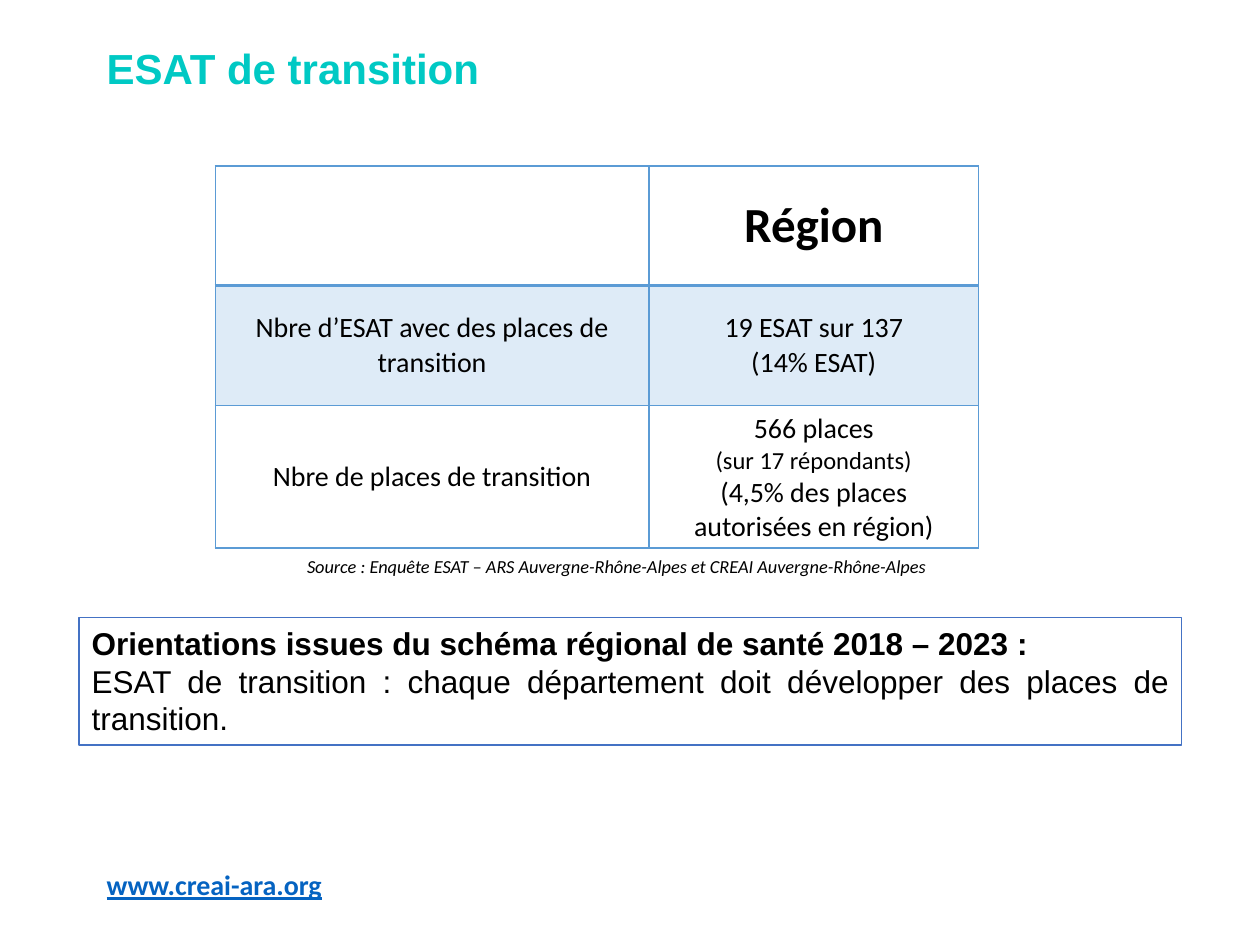
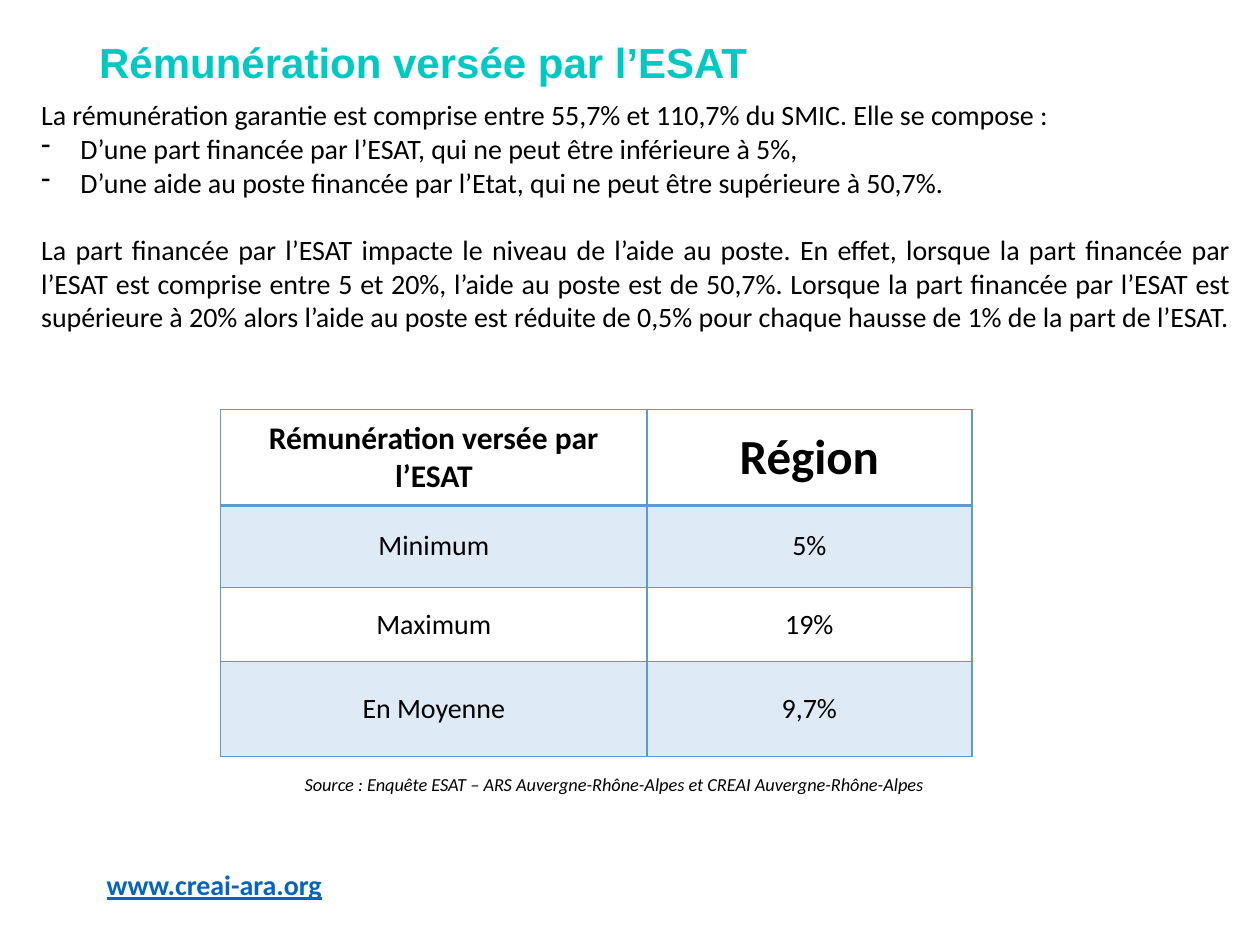
from dataclasses import dataclass, replace
from lxml.etree import SubElement
from pptx import Presentation
from pptx.dml.color import RGBColor
from pptx.enum.shapes import MSO_SHAPE
from pptx.enum.text import MSO_ANCHOR, PP_ALIGN
from pptx.oxml.ns import qn
from pptx.util import Cm, Pt


@dataclass(frozen=True)
class Theme:
    teal: str = "00C9C4"
    link: str = "0563C1"
    black: str = "000000"
    white: str = "FFFFFF"
    grid: str = "5B9BD5"
    band: str = "DEEBF7"
    frame: str = "4472C4"
    sans: str = "Calibri"
    head: str = "Arial"
    title: float = 24
    region: float = 28
    lead: float = 18
    body: float = 16
    small: float = 14
    source: float = 10.5


THEME = Theme()


@dataclass(frozen=True)
class Style:
    size: float = THEME.body
    font: str = THEME.sans
    color: str = THEME.black
    bold: bool = False
    italic: bool = False
    underline: bool = False
    align: PP_ALIGN = PP_ALIGN.LEFT
    before: float = 0
    spacing: float = 1.0
    bullet: bool = False


TITLE = Style(THEME.title, THEME.head, THEME.teal, bold=True, spacing=0.9)
SITE = Style(color=THEME.link, bold=True, underline=True)
SOURCE = Style(THEME.source, italic=True)
BODY = Style(align=PP_ALIGN.JUSTIFY)
ITEM = replace(BODY, bullet=True)
CELL = Style(align=PP_ALIGN.CENTER)
NOTE = replace(CELL, size=THEME.small)
LABEL = replace(CELL, size=THEME.lead, bold=True)
REGION = replace(LABEL, size=THEME.region)
ADVICE = Style(THEME.lead, THEME.head, bold=True)
DETAIL = replace(ADVICE, bold=False, align=PP_ALIGN.JUSTIFY)

SOURCE_TEXT = "Source : Enquête ESAT – ARS Auvergne-Rhône-Alpes et CREAI Auvergne-Rhône-Alpes"


def rgb(color):
    return RGBColor.from_string(color)


def add_dash(para):
    props = para._p.get_or_add_pPr()
    props.set("marL", str(Cm(0.79)))
    props.set("indent", str(-Cm(0.79)))
    SubElement(props, qn("a:buFontTx"))
    SubElement(props, qn("a:buChar"), char="-")


def write(frame, lines):
    frame.text = "\n".join(text for text, _ in lines)
    for para, (_, style) in zip(frame.paragraphs, lines):
        para.alignment = style.align
        para.line_spacing = style.spacing
        if style.before:
            para.space_before = Pt(style.before)
        if style.bullet:
            add_dash(para)
        for run in para.runs:
            font = run.font
            font.size = Pt(style.size)
            font.name = style.font
            font.bold = style.bold
            font.italic = style.italic
            font.underline = style.underline
            font.color.rgb = rgb(style.color)


def add_text(slide, place, lines, anchor=MSO_ANCHOR.TOP):
    box = slide.shapes.add_textbox(*map(Cm, place))
    box.text_frame.word_wrap = True
    box.text_frame.vertical_anchor = anchor
    write(box.text_frame, lines)


def add_panel(slide, place, lines):
    panel = slide.shapes.add_shape(MSO_SHAPE.RECTANGLE, *map(Cm, place))
    panel.shadow.inherit = False
    panel.fill.solid()
    panel.fill.fore_color.rgb = rgb(THEME.white)
    panel.line.color.rgb = rgb(THEME.frame)
    panel.line.width = Pt(1)
    panel.text_frame.word_wrap = True
    panel.text_frame.vertical_anchor = MSO_ANCHOR.TOP
    write(panel.text_frame, lines)


def add_edges(cell, row):
    props = cell._tc.get_or_add_tcPr()
    heavy = {"T": row == 1, "B": row == 0}
    for side in "LRTB":
        width = Pt(2 if heavy.get(side) else 1)
        line = SubElement(props, qn(f"a:ln{side}"), w=str(width))
        fill = SubElement(line, qn("a:solidFill"))
        SubElement(fill, qn("a:srgbClr"), val=THEME.grid)


def add_grid(slide, left, top, widths, heights, rows):
    size = map(Cm, (left, top, sum(widths), sum(heights)))
    table = slide.shapes.add_table(len(heights), len(widths), *size).table
    for column, width in zip(table.columns, widths):
        column.width = Cm(width)
    for index, (row, height) in enumerate(zip(rows, heights)):
        table.rows[index].height = Cm(height)
        for cell, lines in zip(table.rows[index].cells, row):
            write(cell.text_frame, lines)
            cell.vertical_anchor = MSO_ANCHOR.MIDDLE
            add_edges(cell, index)
            cell.fill.solid()
            cell.fill.fore_color.rgb = rgb(THEME.band if index % 2 else THEME.white)


def add_page(deck, title, place):
    slide = deck.slides.add_slide(deck.slide_layouts[6])
    add_text(slide, (1.9, 17.37, 7.62, 0.94), [("www.creai-ara.org", SITE)])
    add_text(slide, place, [(title, TITLE)], MSO_ANCHOR.MIDDLE)
    return slide


def add_places(deck):
    slide = add_page(deck, "ESAT de transition", (1.9, 0.58, 21.9, 1.7))
    rows = [
        [[], [("Région", REGION)]],
        [
            [("Nbre d’ESAT avec des places de transition", CELL)],
            [("19 ESAT sur 137", CELL), ("(14% ESAT)", CELL)],
        ],
        [
            [("Nbre de places de transition", CELL)],
            [
                ("566 places", CELL),
                ("(sur 17 répondants)", NOTE),
                ("(4,5% des places autorisées en région)", CELL),
            ],
        ],
    ]
    add_grid(slide, 4.34, 3.35, (8.74, 6.65), (2.41, 2.41, 2.69), rows)
    add_text(slide, (5.94, 11.07, 15.54, 0.71), [(SOURCE_TEXT, SOURCE)])
    add_panel(slide, (1.6, 12.45, 22.22, 2.57), [
        ("Orientations issues du schéma régional de santé 2018 – 2023 :", ADVICE),
        ("ESAT de transition : chaque département doit développer des places de transition.", DETAIL),
    ])


def add_pay(deck):
    slide = add_page(deck, "Rémunération versée par l’ESAT", (1.75, 0.41, 21.9, 1.8))
    values = [("Minimum", "5%"), ("Maximum", "19%"), ("En Moyenne", "9,7%")]
    rows = [[[("Rémunération versée par l’ESAT", LABEL)], [("Région", REGION)]]]
    rows += [[[(text, CELL)] for text in pair] for pair in values]
    add_grid(slide, 4.45, 8.26, (8.59, 6.55), (1.93, 1.65, 1.5, 1.91), rows)
    add_text(slide, (0.58, 1.85, 24.49, 5.74), [
        ("La rémunération garantie est comprise entre 55,7% et 110,7% du SMIC. Elle se compose :", BODY),
        ("D’une part financée par l’ESAT, qui ne peut être inférieure à 5%,", ITEM),
        ("D’une aide au poste financée par l’Etat, qui ne peut être supérieure à 50,7%.", ITEM),
        (
            "La part financée par l’ESAT impacte le niveau de l’aide au poste. "
            "En effet, lorsque la part financée par l’ESAT est comprise entre 5 et 20%, "
            "l’aide au poste est de 50,7%. Lorsque la part financée par l’ESAT est "
            "supérieure à 20% alors l’aide au poste est réduite de 0,5% pour chaque "
            "hausse de 1% de la part de l’ESAT.",
            replace(BODY, before=19.5),
        ),
    ])
    add_text(slide, (5.89, 15.47, 13.69, 0.71), [(SOURCE_TEXT, SOURCE)])


def main():
    deck = Presentation()
    deck.slide_width = Cm(25.4)
    deck.slide_height = Cm(19.05)
    add_places(deck)
    add_pay(deck)
    deck.save("out.pptx")


if __name__ == "__main__":
    main()
